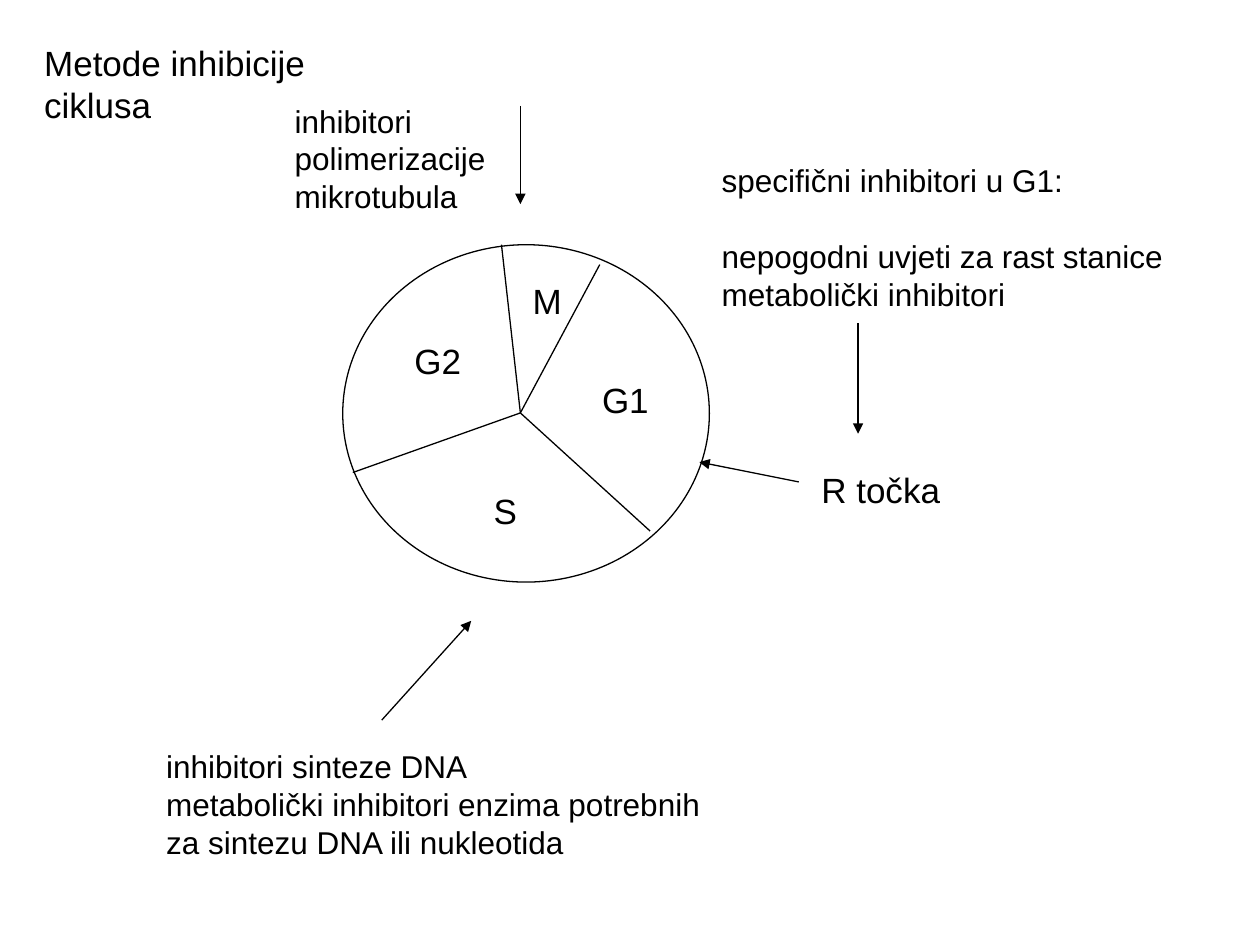
from lxml.etree import SubElement
from pptx import Presentation
from pptx.dml.color import RGBColor
from pptx.enum.shapes import MSO_CONNECTOR, MSO_SHAPE
from pptx.enum.text import MSO_ANCHOR, MSO_AUTO_SIZE, PP_ALIGN
from pptx.oxml.ns import qn
from pptx.util import Inches, Pt

BLACK = RGBColor(0, 0, 0)
WHITE = RGBColor(255, 255, 255)
FONT = "Arial"
WIDTH, HEIGHT = Inches(10), Inches(7.5)
COLUMN, ROW = WIDTH / 100, HEIGHT / 100

deck = Presentation()
deck.slide_width, deck.slide_height = WIDTH, HEIGHT
page = deck.slides.add_slide(deck.slide_layouts[5])


def draw_line(start, end, arrow=False):
    line = page.shapes.add_connector(
        MSO_CONNECTOR.STRAIGHT,
        int(start[0] * COLUMN), int(start[1] * ROW),
        int(end[0] * COLUMN), int(end[1] * ROW),
    )
    line.line.color.rgb = BLACK
    line.line.width = Pt(0.75)
    if arrow:
        SubElement(line.line._get_or_add_ln(), qn("a:tailEnd"), type="triangle")
    SubElement(line._element.spPr, qn("a:effectLst"))


def write_text(box, area, lines, size, wrap=False):
    left, top, width, height = area
    box.left, box.top = int(left * COLUMN), int(top * ROW)
    box.width, box.height = int(width * COLUMN), int(height * ROW)
    frame = box.text_frame
    frame.word_wrap = wrap
    frame.auto_size = MSO_AUTO_SIZE.SHAPE_TO_FIT_TEXT
    frame.vertical_anchor = MSO_ANCHOR.TOP
    for index, (text, gap) in enumerate(lines):
        para = frame.add_paragraph() if index else frame.paragraphs[0]
        para.alignment = PP_ALIGN.LEFT
        para.space_before = Pt(gap)
        span = para.add_run()
        span.text = text
        span.font.name = FONT
        span.font.size = Pt(size)
        span.font.color.rgb = BLACK


write_text(page.shapes.title, (2.5, 3.7, 32, 5.7), [("Metode inhibicije ciklusa", 0)], 20)

cycle = page.shapes.add_shape(
    MSO_SHAPE.OVAL, int(27.2 * COLUMN), int(25.9 * ROW), int(29.1 * COLUMN), int(35.7 * ROW)
)
cycle.shadow.inherit = False
cycle.fill.solid()
cycle.fill.fore_color.rgb = WHITE
cycle.line.color.rgb = BLACK
cycle.line.width = Pt(0.75)

center = (41.3, 43.7)
for phase_border in [(47.6, 28), (51.6, 56.2), (28, 50), (39.8, 25.9)]:
    draw_line(center, phase_border)

arrows = [
    ((63.4, 51), (55.5, 48.9)),
    ((30.3, 76.2), (37.4, 65.7)),
    ((68.1, 34.2), (68.1, 45.9)),
    ((41.3, 11.2), (41.3, 21.6)),
]
for start, end in arrows:
    draw_line(start, end, arrow=True)

labels = [
    ("G1", 46.8, 39.4, 5.7),
    ("S", 38.2, 51.1, 3.9),
    ("G2", 31.9, 35.3, 5.7),
    ("M", 41.3, 28.9, 4.3),
    ("R točka", 64.2, 48.9, 11.4),
]
for text, left, top, width in labels:
    write_text(page.shapes.add_textbox(0, 0, 0, 0), (left, top, width, 5.7), [(text, 0)], 20)

notes = [
    ((12.2, 78.4, 45.1, 13.3), False, [
        ("inhibitori sinteze DNA", 0),
        ("metabolički inhibitori enzima potrebnih", 0),
        ("za sintezu DNA ili nukleotida", 0),
    ]),
    ((56.3, 16.4, 37.4, 21.5), False, [
        ("specifični inhibitori u G1:", 0),
        ("nepogodni uvjeti za rast stanice", 21.6),
        ("metabolički inhibitori", 0),
    ]),
    ((22.4, 10.1, 25.8, 13.5), True, [("inhibitori polimerizacije mikrotubula", 0)]),
]
for area, wrap, lines in notes:
    write_text(page.shapes.add_textbox(0, 0, 0, 0), area, lines, 18, wrap)

deck.save("out.pptx")
